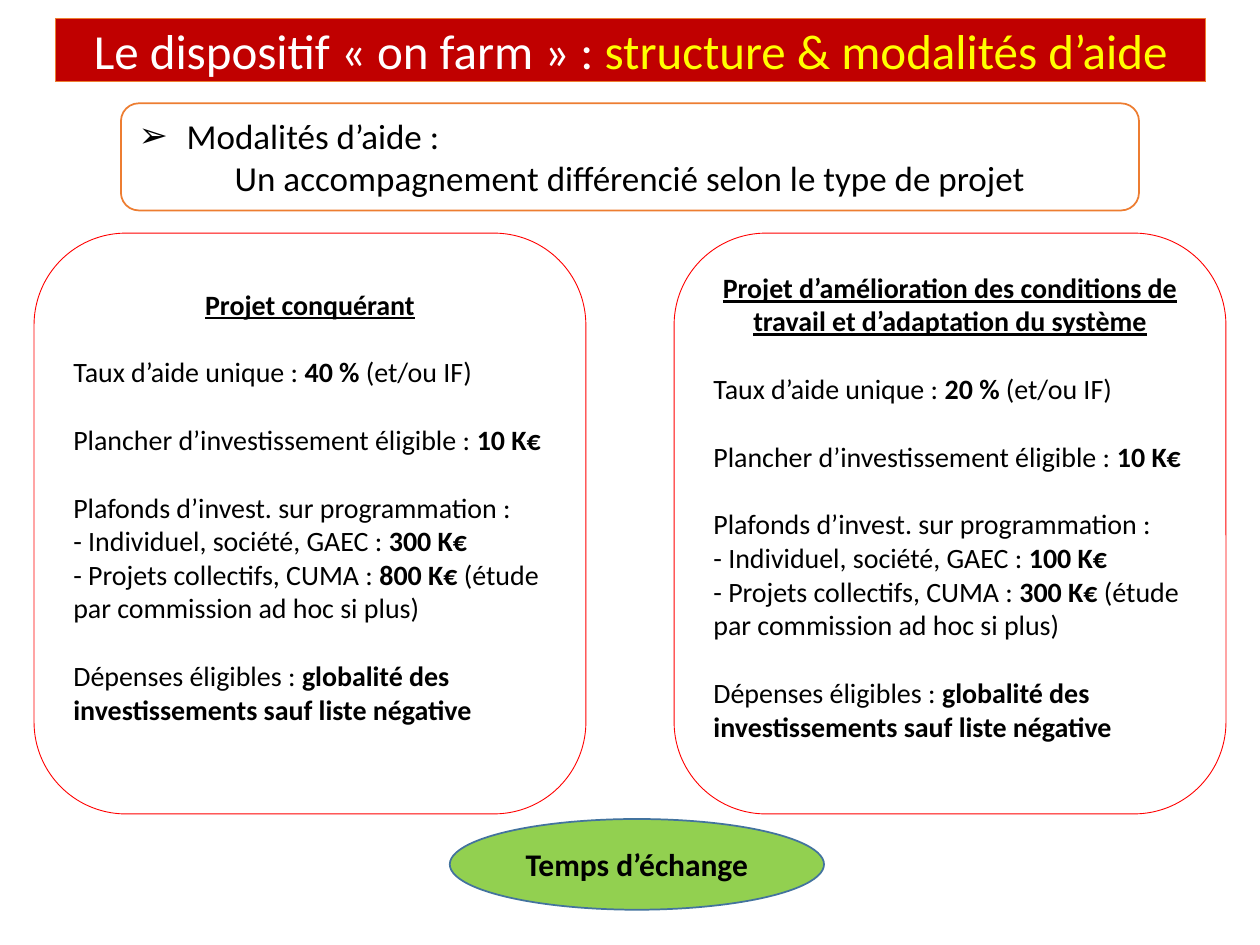
"""Build the slide on aid terms for the two kinds of on-farm project."""
from lxml import etree
from pptx import Presentation
from pptx import util as u
from pptx.dml import color
from pptx.enum import shapes, text
from pptx.oxml import ns

CENTER, LEFT = text.PP_ALIGN.CENTER, text.PP_ALIGN.LEFT


def rgb(value):
    return color.RGBColor.from_string(value)


def write(para, words, size=16, ink="000000", bold=False, underline=False, align=LEFT, before=0):
    para.alignment = align
    para.space_before = u.Pt(before)
    span = para.add_run()
    span.text = words
    span.font.name = "Calibri"
    span.font.size = u.Pt(size)
    span.font.bold = bold
    span.font.underline = underline
    span.font.color.rgb = rgb(ink)


deck = Presentation()
deck.slide_width, deck.slide_height = u.Inches(10), u.Inches(7.5)
page = deck.slides.add_slide(deck.slide_layouts[1])
title, body = page.placeholders
rounded, oval = shapes.MSO_SHAPE.ROUNDED_RECTANGLE, shapes.MSO_SHAPE.OVAL
conquest, improvement, closing = [
    page.shapes.add_shape(kind, 0, 0, 0, 0) for kind in (rounded, rounded, oval)
]

styles = [
    (title, (0.44, 0.15, 9.13, 0.5), "C00000", "ED7D31", 0.5),
    (body, (0.96, 0.82, 8.08, 0.85), None, "ED7D31", 1),
    (conquest, (0.27, 1.85, 4.38, 4.61), "FFFFFF", "FF0000", 0.5),
    (improvement, (5.35, 1.85, 4.38, 4.61), "FFFFFF", "FF0000", 0.5),
    (closing, (3.57, 6.5, 2.97, 0.72), "92D050", "43739E", 1),
]
for box, place, fill, line, width in styles:
    box.left, box.top, box.width, box.height = [u.Inches(length) for length in place]
    if box.is_placeholder:
        outline = etree.SubElement(box.element.spPr, ns.qn("a:prstGeom"), prst="roundRect")
        etree.SubElement(outline, ns.qn("a:avLst"))
    else:
        box.shadow.inherit = False
    if fill:
        box.fill.solid()
        box.fill.fore_color.rgb = rgb(fill)
    else:
        box.fill.background()
    box.line.color.rgb = rgb(line)
    box.line.width = u.Pt(width)
    box.text_frame.word_wrap = True
    box.text_frame.auto_size = text.MSO_AUTO_SIZE.NONE
    box.text_frame.vertical_anchor = text.MSO_ANCHOR.MIDDLE

heading = title.text_frame.paragraphs[0]
write(heading, "Le dispositif «\u00a0on farm\u00a0» : ", size=28, ink="FFFFFF", align=CENTER)
write(heading, "structure & modalités d’aide", size=28, ink="FFFF00", align=CENTER)

topic, detail = body.text_frame.paragraphs[0], body.text_frame.add_paragraph()
for para, indent, bullet in [(topic, 0.38, "➢"), (detail, 0, None)]:
    props = para._p.get_or_add_pPr()
    props.set("marL", str(u.Inches(indent)))
    props.set("indent", str(-u.Inches(indent)))
    if bullet:
        etree.SubElement(props, ns.qn("a:buChar"), char=bullet)
    else:
        etree.SubElement(props, ns.qn("a:buNone"))
write(topic, "Modalités d’aide :", size=20)
write(detail, "Un accompagnement différencié selon le type de projet", size=20, align=CENTER)

projects = [
    (conquest, "Projet conquérant", "40 %", "300 K€", "800 K€"),
    (improvement, "Projet d’amélioration des conditions de travail et d’adaptation du système",
     "20 %", "100 K€", "300 K€"),
]
for box, name, rate, single, collective in projects:
    frame = box.text_frame
    frame.margin_bottom = u.Inches(0.32)
    write(frame.paragraphs[0], name, bold=True, underline=True, align=CENTER)
    lines = [
        (19.5, "Taux d’aide unique : ", rate, " (et/ou IF)"),
        (19.5, "Plancher d’investissement éligible : ", "10 K€", ""),
        (19.5, "Plafonds d’invest. sur programmation :", "", ""),
        (0, "- Individuel, société, GAEC : ", single, ""),
        (0, "- Projets collectifs, CUMA : ", collective, " (étude par commission ad hoc si plus)"),
        (19.5, "Dépenses éligibles : ", "globalité des investissements sauf liste négative", ""),
    ]
    for before, label, value, remark in lines:
        para = frame.add_paragraph()
        for words, bold in [(label, False), (value, True), (remark, False)]:
            if words:
                write(para, words, bold=bold, before=before)

write(closing.text_frame.paragraphs[0], "Temps d’échange", size=18, bold=True, align=CENTER)

deck.save("out.pptx")
